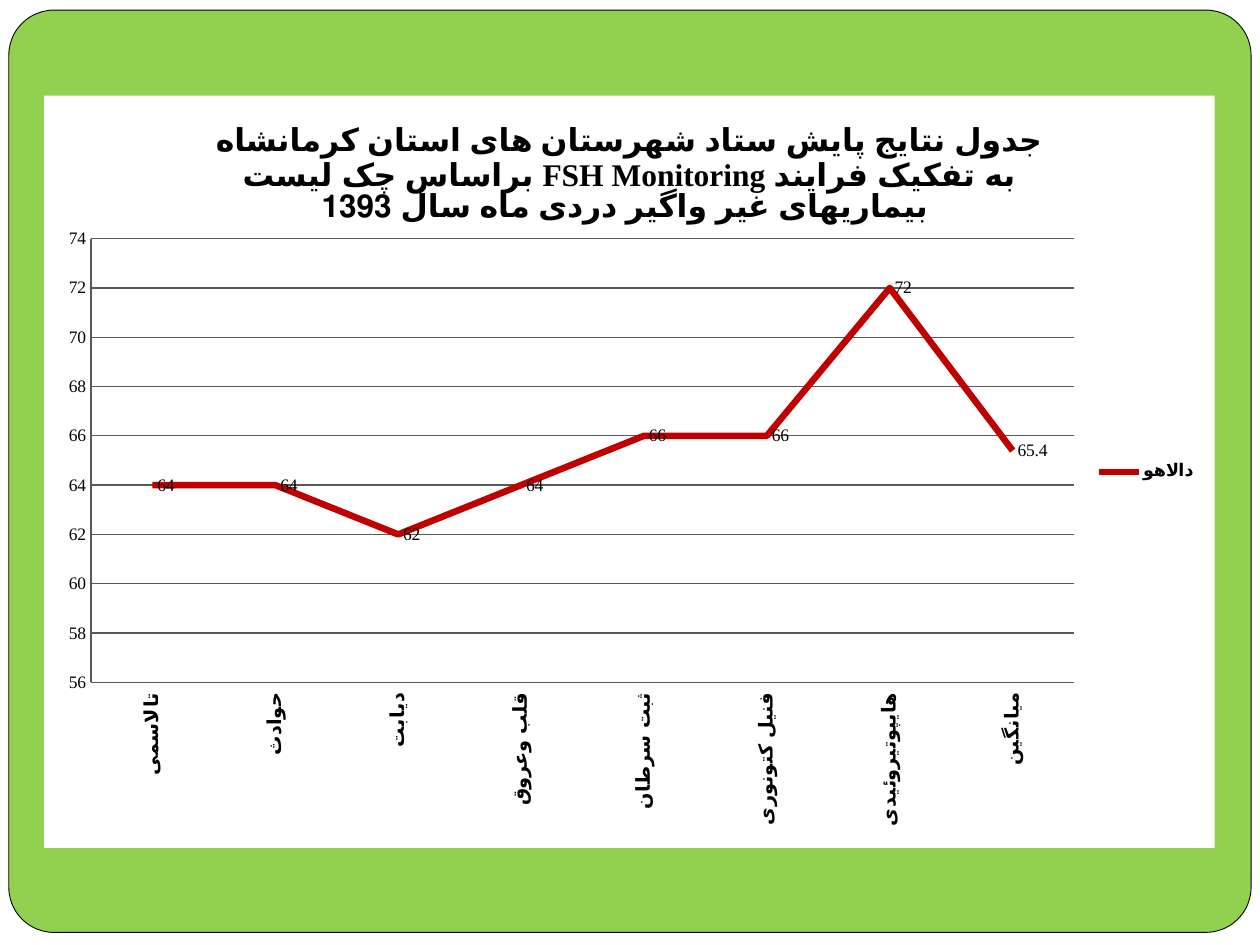
"""Build a slide with a line chart of monitoring results on a green rounded panel."""
import lxml.etree
import pptx
import pptx.chart.data
import pptx.dml.color
import pptx.enum.chart
import pptx.enum.shapes
import pptx.oxml
import pptx.oxml.ns
import pptx.util

Inches, Pt = pptx.util.Inches, pptx.util.Pt
qn = pptx.oxml.ns.qn

FONT = "Times New Roman"
TITLE = ("جدول نتایج پایش ستاد شهرستان های استان کرمانشاه براساس چک لیست "
         "FSH Monitoring به تفکیک فرایند بیماریهای غیر واگیر دردی ماه سال 1393 ")
SERIES = "دالاهو "
SCORES = [
    ("تالاسمی ", 64),
    ("حوادث ", 64),
    ("دیابت ", 62),
    ("قلب وعروق ", 64),
    ("ثبت سرطان ", 66),
    ("فنیل کتونوری ", 66),
    ("هایپوتیروئیدی ", 72),
    ("میانگین ", 65.4),
]
PLOT = {"x": 0.04, "y": 0.19, "w": 0.84, "h": 0.59}


def rgb(value):
    return pptx.dml.color.RGBColor.from_string(value)


def style_font(font, size, bold=False):
    font.name, font.size, font.bold = FONT, Pt(size), bold
    font.color.rgb = rgb("000000")


def style_line(line, color, width):
    line.color.rgb = rgb(color)
    line.width = Pt(width)


def add_panel(s):
    sp = s.shapes.add_shape(pptx.enum.shapes.MSO_SHAPE.ROUNDED_RECTANGLE,
                            Inches(0.07), Inches(0.08), Inches(9.86), Inches(7.32))
    sp.adjustments[0] = 0.049
    sp.shadow.inherit = False
    sp.fill.solid()
    sp.fill.fore_color.rgb = rgb("92D050")
    style_line(sp.line, "000000", 0.5)


def place_plot(chart):
    area = chart._chartSpace.chart.plotArea
    for old in area.findall(qn("c:layout")):
        area.remove(old)
    layout = lxml.etree.Element(qn("c:layout"))
    manual = lxml.etree.SubElement(layout, qn("c:manualLayout"))
    settings = [("layoutTarget", "inner"), ("xMode", "edge"), ("yMode", "edge")]
    for tag, value in settings + list(PLOT.items()):
        lxml.etree.SubElement(manual, qn("c:" + tag)).set("val", str(value))
    area.insert(0, layout)


def fill_chart(chart, color):
    sp_pr = pptx.oxml.parse_xml(
        f'<c:spPr {pptx.oxml.ns.nsdecls("c", "a")}><a:solidFill><a:srgbClr val="{color}"/>'
        '</a:solidFill><a:ln><a:noFill/></a:ln></c:spPr>')
    chart._chartSpace.chart.addnext(sp_pr)


def style_axes(chart):
    none = pptx.enum.chart.XL_TICK_MARK.NONE
    for axis, size, bold in ((chart.category_axis, 11, True), (chart.value_axis, 10, False)):
        axis.major_tick_mark = axis.minor_tick_mark = none
        style_font(axis.tick_labels.font, size, bold)
        style_line(axis.format.line, "595959", 0.75)
    body = chart.category_axis._element.find(qn("c:txPr")).find(qn("a:bodyPr"))
    body.set("rot", "-5400000")
    body.set("vert", "horz")
    axis = chart.value_axis
    axis.minimum_scale, axis.maximum_scale, axis.major_unit = 56, 74, 2
    axis.has_major_gridlines = True
    style_line(axis.major_gridlines.format.line, "595959", 0.75)


def add_scores(s):
    data = pptx.chart.data.CategoryChartData()
    data.categories = [name for name, _ in SCORES]
    data.add_series(SERIES, [score for _, score in SCORES])
    chart = s.shapes.add_chart(pptx.enum.chart.XL_CHART_TYPE.LINE, Inches(0.35), Inches(0.76),
                               Inches(9.29), Inches(5.97), data).chart
    style_font(chart.font, 10)
    fill_chart(chart, "FFFFFF")
    place_plot(chart)
    style_axes(chart)

    chart.has_title = True
    chart.chart_title.include_in_layout = False
    r = chart.chart_title.text_frame.paragraphs[0].add_run()
    r.text = TITLE
    style_font(r.font, 18, True)

    chart.has_legend = True
    chart.legend.position = pptx.enum.chart.XL_LEGEND_POSITION.RIGHT
    chart.legend.include_in_layout = False
    style_font(chart.legend.font, 10, True)

    plot = chart.plots[0]
    plot.vary_by_categories = False
    series = plot.series[0]
    series.smooth = False
    series.marker.style = pptx.enum.chart.XL_MARKER_STYLE.NONE
    style_line(series.format.line, "C00000", 3.75)
    labels = series.data_labels
    labels.show_value = True
    labels.position = pptx.enum.chart.XL_LABEL_POSITION.RIGHT
    style_font(labels.font, 10)


def main():
    prs = pptx.Presentation()
    prs.slide_width, prs.slide_height = Inches(10), Inches(7.5)
    s = prs.slides.add_slide(prs.slide_layouts[6])
    s.background.fill.solid()
    s.background.fill.fore_color.rgb = rgb("FFFFFF")
    add_panel(s)
    add_scores(s)
    prs.save("out.pptx")


if __name__ == "__main__":
    main()
